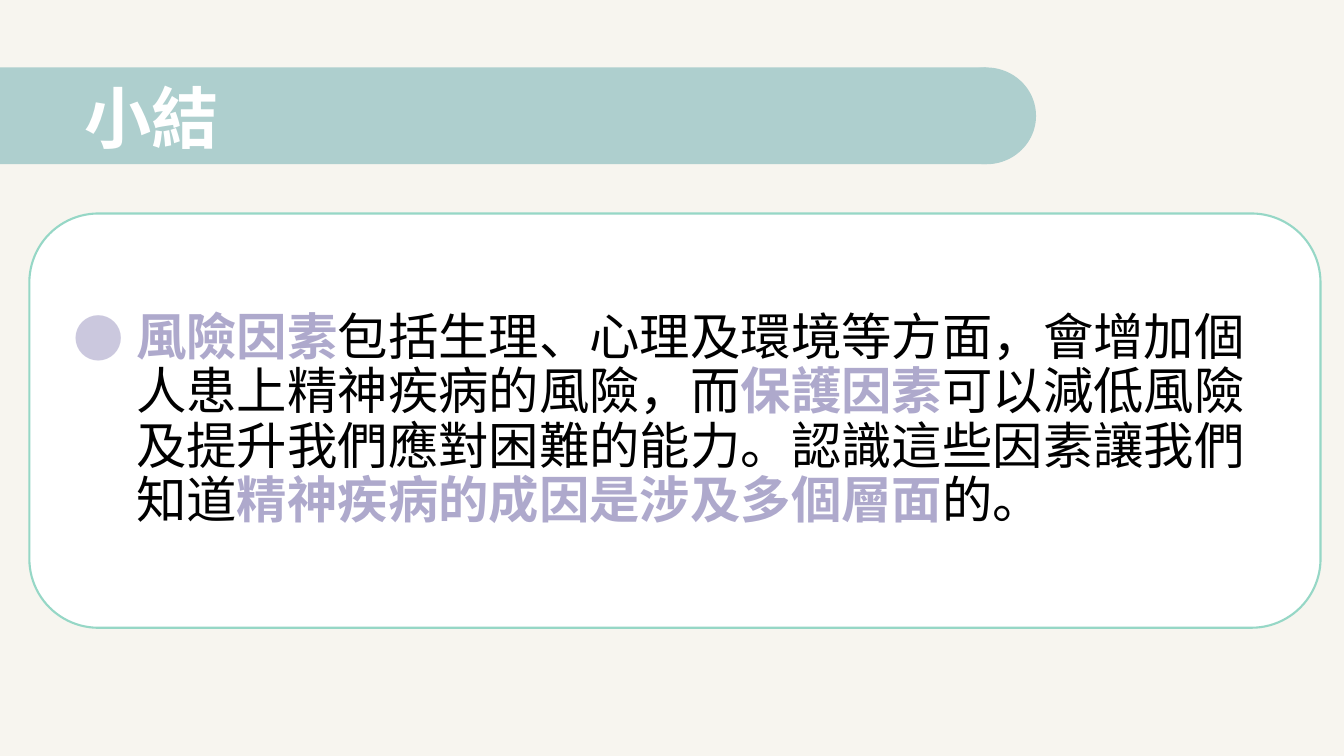
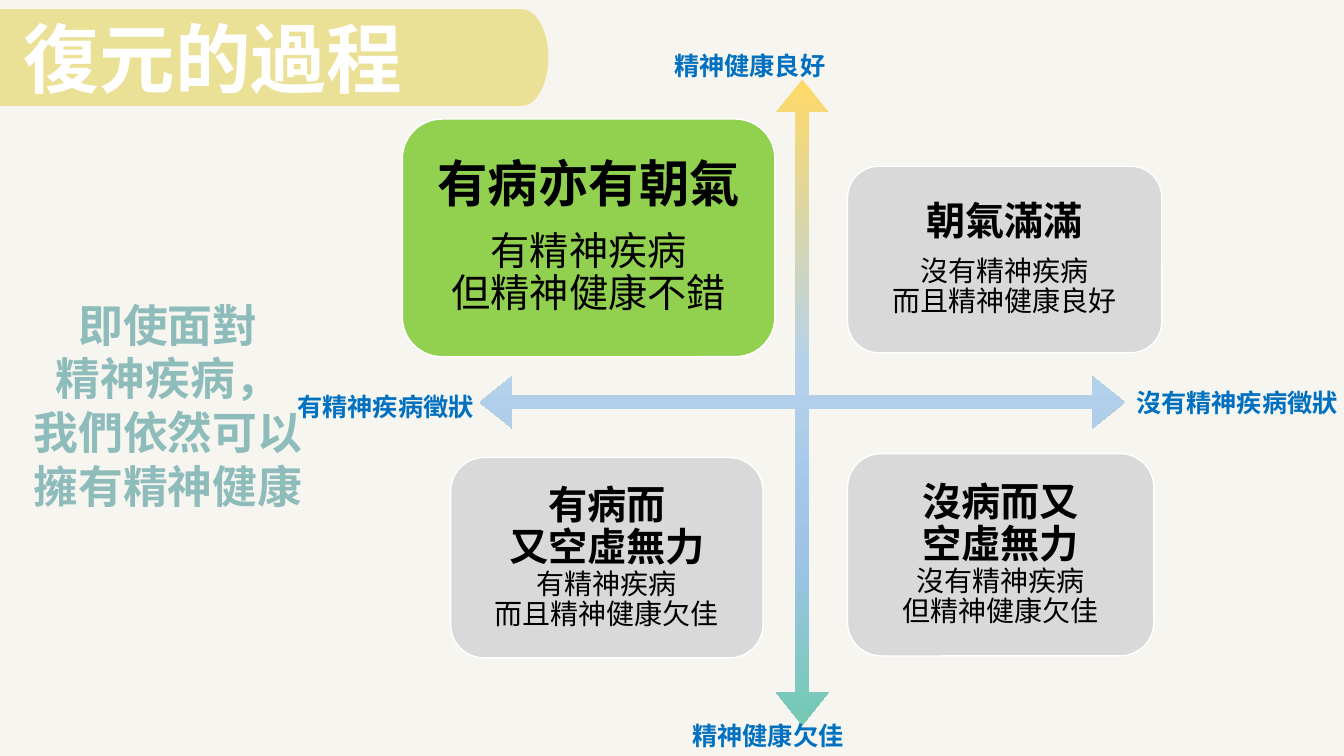
"""Two slides on mental illness: a summary and the recovery quadrant."""
from dataclasses import dataclass
from lxml import etree
from pptx import Presentation
from pptx.dml.color import RGBColor
from pptx.enum.shapes import MSO_SHAPE
from pptx.enum.text import MSO_ANCHOR, MSO_AUTO_SIZE, PP_ALIGN
from pptx.oxml.ns import qn
from pptx.shapes.autoshape import Shape
from pptx.slide import Slide
from pptx.text.text import TextFrame, _Paragraph
from pptx.util import Cm, Pt

RECTANGLE = MSO_SHAPE.RECTANGLE
ROUNDED = MSO_SHAPE.ROUNDED_RECTANGLE
OVAL = MSO_SHAPE.OVAL
QUAD_ARROW = MSO_SHAPE.QUAD_ARROW
MIDDLE = MSO_ANCHOR.MIDDLE
NO_AUTOFIT = MSO_AUTO_SIZE.NONE
LEFT, CENTER = PP_ALIGN.LEFT, PP_ALIGN.CENTER


@dataclass(frozen=True)
class Theme:
    """Colours, type sizes and spacing of the deck."""
    font: str = "Noto Sans CJK TC"
    paper: str = "F7F5EF"
    white: str = "FFFFFF"
    ink: str = "000000"
    teal: str = "AECFCE"
    yellow: str = "EAE096"
    mint: str = "96D7C6"
    lilac: str = "AEA9CC"
    bullet: str = "CBC8DE"
    grey: str = "D9D9D9"
    green: str = "92D050"
    blue: str = "0070C0"
    motto: str = "8EBCBB"
    axes: tuple[tuple[int, str], ...] = (
        (0, "FFD966"), (44, "B5D2EC"), (74, "9DC3E6"), (100, "74CAB3"))
    summary_size: int = 36
    motto_size: int = 32
    label_size: int = 18
    tight: float = 0.9


@dataclass(frozen=True)
class Box:
    """A place on the slide, in centimetres."""
    left: float
    top: float
    width: float
    height: float


@dataclass(frozen=True)
class Header:
    """A title on a band with a rounded end."""
    title: str
    size: int
    text_left: float
    band_top: float
    tip: float
    cap_width: float
    color: str


@dataclass(frozen=True)
class Card:
    """One quadrant: bold heading lines above detail lines."""
    box: Box
    heading: tuple[str, ...]
    detail: tuple[str, ...]
    color: str
    heading_size: int = 28
    detail_size: int = 20
    gap: float = 0
    margin: float = 0.3


@dataclass(frozen=True)
class AxisLabel:
    """The name of one end of an axis."""
    text: str
    left: float
    top: float


THEME = Theme()
SLIDE_WIDTH, SLIDE_HEIGHT = 33.87, 19.05
BAND_HEIGHT = 2.44
TITLE_HEIGHT = 3.68
TITLE_DROP = 0.15
BULLET_INDENT = 1.57

SUMMARY_HEADER = Header("小結", 48, 1.88, 1.7, 26.11, 2.51, THEME.teal)
RECOVERY_HEADER = Header("復元的過程", 54, 0.35, 0.23, 13.82, 1.35, THEME.yellow)
SUMMARY_PANEL = Box(0.74, 5.38, 32.54, 10.44)
SUMMARY = (
    ("風險因素", True),
    ("包括生理、心理及環境等方面，會增加個人患上精神疾病的風險，而", False),
    ("保護因素", True),
    ("可以減低風險及提升我們應對困難的能力。認識這些因素讓我們知道", False),
    ("精神疾病的成因是涉及多個層面", True),
    ("的。", False),
)
AXES = Box(12.09, 2.01, 16.26, 16.26)
CARDS = (
    Card(Box(21.36, 4.19, 7.92, 4.7), ("朝氣滿滿",),
         ("沒有精神疾病", "而且精神健康良好"), THEME.grey, gap=9.8),
    Card(Box(10.14, 3, 9.39, 5.99), ("有病亦有朝氣",),
         ("有精神疾病", "但精神健康不錯"), THEME.green, 36, 28, 12.6, 0.38),
    Card(Box(21.36, 11.43, 7.72, 5.1), ("沒病而又", "空虛無力"),
         ("沒有精神疾病", "但精神健康欠佳"), THEME.grey),
    Card(Box(11.36, 11.53, 7.87, 5.05), ("有病而", "又空虛無力"),
         ("有精神疾病", "而且精神健康欠佳"), THEME.grey),
)
AXIS_LABELS = (
    AxisLabel("精神健康良好", 16.99, 1.27),
    AxisLabel("精神健康欠佳", 17.45, 18.16),
    AxisLabel("有精神疾病徵狀", 7.49, 9.86),
    AxisLabel("沒有精神疾病徵狀", 28.63, 9.75),
)
MOTTO_BOX = Box(0.36, 7.37, 7.75, 5.74)
MOTTO = ("即使面對", "精神疾病，", "我們依然可以擁有精神健康")


def rgb(color: str) -> RGBColor:
    """Turn a hex string into a colour."""
    return RGBColor.from_string(color)


def lengths(box: Box) -> tuple[Cm, Cm, Cm, Cm]:
    """Give a box as lengths."""
    return Cm(box.left), Cm(box.top), Cm(box.width), Cm(box.height)


def set_margins(frame: TextFrame, sides: float, ends: float) -> None:
    """Set the inner margins of a text frame."""
    frame.margin_left = frame.margin_right = Cm(sides)
    frame.margin_top = frame.margin_bottom = Cm(ends)


def style(paragraph: _Paragraph, size: int, color: str, bold: bool = True,
          align: PP_ALIGN = LEFT, spacing: float = 1.0) -> None:
    """Format a paragraph in the deck's typeface."""
    paragraph.alignment = align
    paragraph.line_spacing = spacing
    font = paragraph.font
    font.name, font.size, font.bold = THEME.font, Pt(size), bold
    font.color.rgb = rgb(color)
    defaults = paragraph._p.pPr.find(qn("a:defRPr"))
    etree.SubElement(defaults, qn("a:ea"), typeface=THEME.font)


def next_paragraph(frame: TextFrame, index: int) -> _Paragraph:
    """Give the first paragraph of a frame, or a new one after it."""
    return frame.add_paragraph() if index else frame.paragraphs[0]


def add_shape(slide: Slide, kind: MSO_SHAPE, box: Box, color: str,
              line: str | None = None, line_width: float = 1) -> Shape:
    """Draw a flat shape, with an outline if a line colour is given."""
    shape = slide.shapes.add_shape(kind, *lengths(box))
    shape.shadow.inherit = False
    shape.fill.solid()
    shape.fill.fore_color.rgb = rgb(color)
    if line:
        shape.line.color.rgb = rgb(line)
        shape.line.width = Pt(line_width)
    else:
        shape.line.fill.background()
    return shape


def add_header(slide: Slide, header: Header) -> None:
    """Draw the band and put the title on top of it."""
    cap_left = header.tip - header.cap_width
    band_width = header.tip - header.cap_width / 2
    add_shape(slide, RECTANGLE,
              Box(0, header.band_top, band_width, BAND_HEIGHT), header.color)
    add_shape(slide, OVAL,
              Box(cap_left, header.band_top, header.cap_width, BAND_HEIGHT),
              header.color)
    title = slide.shapes.title
    top = header.band_top + (BAND_HEIGHT - TITLE_HEIGHT) / 2 + TITLE_DROP
    title.left, title.top, title.width, title.height = lengths(
        Box(header.text_left, top, header.tip - header.text_left, TITLE_HEIGHT))
    frame = title.text_frame
    frame.text = header.title
    frame.word_wrap, frame.auto_size = True, NO_AUTOFIT
    frame.vertical_anchor = MIDDLE
    style(frame.paragraphs[0], header.size, THEME.white, spacing=THEME.tight)
    slide.shapes.element.append(title.element)


def add_bullet(paragraph: _Paragraph) -> None:
    """Give a paragraph a round bullet and a hanging indent."""
    properties = paragraph._p.get_or_add_pPr()
    properties.set("marL", str(Cm(BULLET_INDENT)))
    properties.set("indent", str(-Cm(BULLET_INDENT)))
    bullet_color = etree.SubElement(properties, qn("a:buClr"))
    etree.SubElement(bullet_color, qn("a:srgbClr"), val=THEME.bullet)
    etree.SubElement(properties, qn("a:buFont"), typeface=THEME.font)
    etree.SubElement(properties, qn("a:buChar"), char="●")


def add_summary(slide: Slide) -> None:
    """Draw the panel with the summary and its key terms."""
    panel = add_shape(slide, ROUNDED, SUMMARY_PANEL, THEME.white, THEME.mint, 1.5)
    frame = panel.text_frame
    frame.word_wrap, frame.vertical_anchor = True, MIDDLE
    set_margins(frame, 0.61, 0.13)
    paragraph = frame.paragraphs[0]
    add_bullet(paragraph)
    style(paragraph, THEME.summary_size, THEME.ink, False, spacing=THEME.tight)
    for text, is_key_term in SUMMARY:
        run = paragraph.add_run()
        run.text = text
        if is_key_term:
            run.font.bold = True
            run.font.color.rgb = rgb(THEME.lilac)


def add_axes(slide: Slide) -> None:
    """Draw the crossed axes, shaded from good to poor health."""
    axes = add_shape(slide, QUAD_ARROW, AXES, THEME.white)
    for index, share in enumerate((0.02, 0.04, 0.05)):
        axes.adjustments[index] = share
    axes.fill.gradient()
    axes.fill.gradient_angle = 270
    stops = next(axes.element.iter(qn("a:gsLst")))
    for stop in list(stops):
        stops.remove(stop)
    for percent, color in THEME.axes:
        stop = etree.SubElement(stops, qn("a:gs"), pos=str(percent * 1000))
        etree.SubElement(stop, qn("a:srgbClr"), val=color)


def add_card(slide: Slide, card: Card) -> None:
    """Draw one quadrant with its text."""
    shape = add_shape(slide, ROUNDED, card.box, card.color, THEME.white)
    frame = shape.text_frame
    frame.word_wrap, frame.vertical_anchor = True, MIDDLE
    set_margins(frame, card.margin, card.margin)
    for index, line in enumerate(card.heading + card.detail):
        is_heading = index < len(card.heading)
        paragraph = next_paragraph(frame, index)
        paragraph.text = line
        size = card.heading_size if is_heading else card.detail_size
        style(paragraph, size, THEME.ink, is_heading, CENTER, THEME.tight)
        if is_heading and card.gap:
            paragraph.space_after = Pt(card.gap)


def add_axis_label(slide: Slide, label: AxisLabel) -> None:
    """Write the name of an axis end on one line."""
    textbox = slide.shapes.add_textbox(
        Cm(label.left), Cm(label.top),
        Pt(len(label.text) * THEME.label_size), Cm(0.89))
    frame = textbox.text_frame
    frame.word_wrap = False
    set_margins(frame, 0, 0)
    frame.text = label.text
    style(frame.paragraphs[0], THEME.label_size, THEME.blue)


def add_motto(slide: Slide) -> None:
    """Write the message beside the quadrant."""
    frame = slide.shapes.add_textbox(*lengths(MOTTO_BOX)).text_frame
    frame.word_wrap = True
    for index, line in enumerate(MOTTO):
        paragraph = next_paragraph(frame, index)
        paragraph.text = line
        style(paragraph, THEME.motto_size, THEME.motto, align=CENTER)


def main() -> None:
    """Build and save the deck."""
    deck = Presentation()
    deck.slide_width, deck.slide_height = Cm(SLIDE_WIDTH), Cm(SLIDE_HEIGHT)
    background = deck.slide_master.background.fill
    background.solid()
    background.fore_color.rgb = rgb(THEME.paper)
    title_only = deck.slide_layouts.get_by_name("Title Only")

    summary = deck.slides.add_slide(title_only)
    add_summary(summary)
    add_header(summary, SUMMARY_HEADER)

    recovery = deck.slides.add_slide(title_only)
    add_axes(recovery)
    for card in CARDS:
        add_card(recovery, card)
    for label in AXIS_LABELS:
        add_axis_label(recovery, label)
    add_header(recovery, RECOVERY_HEADER)
    add_motto(recovery)
    deck.save("out.pptx")


if __name__ == "__main__":
    main()
